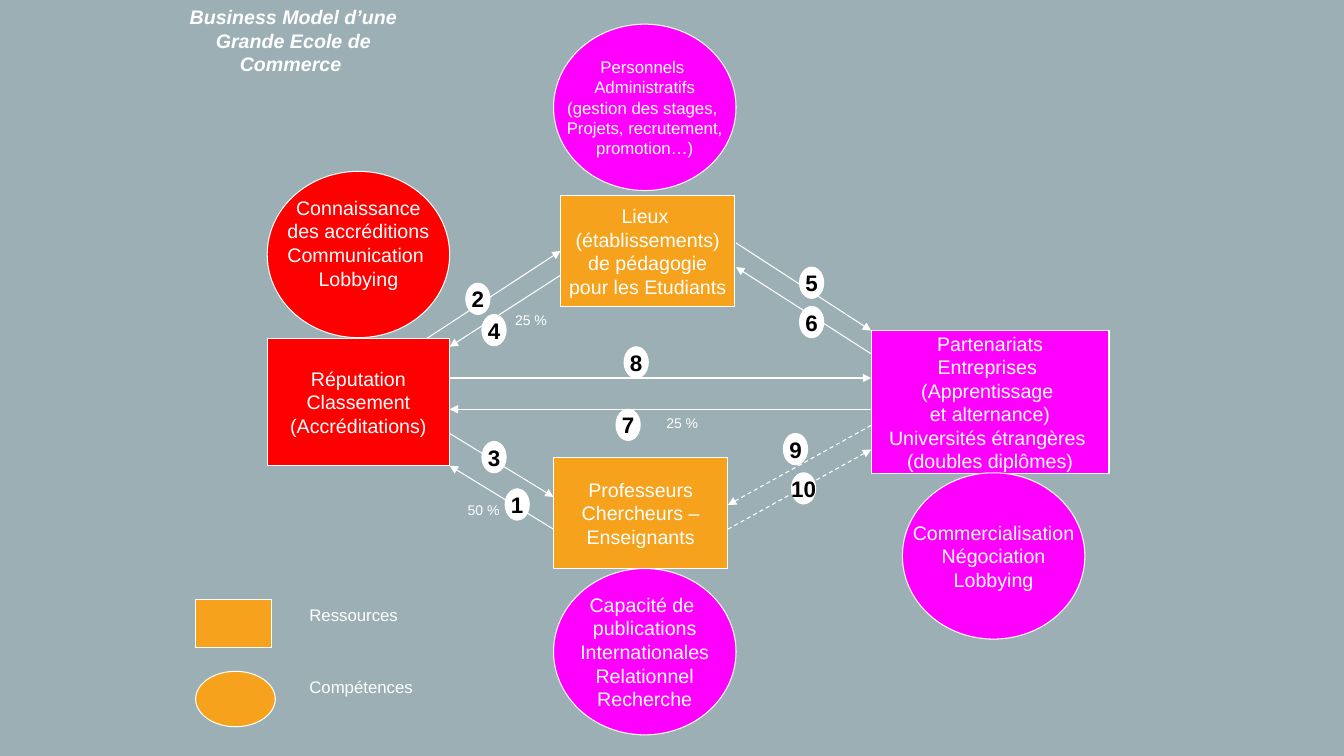
from lxml import etree
from pptx import Presentation
from pptx.dml.color import RGBColor
from pptx.enum.dml import MSO_LINE
from pptx.enum.shapes import MSO_CONNECTOR, MSO_SHAPE
from pptx.enum.text import MSO_ANCHOR, MSO_AUTO_SIZE, PP_ALIGN
from pptx.oxml.ns import qn
from pptx.util import Inches, Pt

WHITE = RGBColor(0xFF, 0xFF, 0xFF)
BLACK = RGBColor(0x00, 0x00, 0x00)
RED = RGBColor(0xFF, 0x00, 0x00)
ORANGE = RGBColor(0xF6, 0xA2, 0x1D)
MAGENTA = RGBColor(0xFF, 0x00, 0xFF)
GREY = RGBColor(0x9B, 0xAF, 0xB5)
RECTANGLE, ELLIPSE = MSO_SHAPE.RECTANGLE, MSO_SHAPE.OVAL
STRAIGHT, DASH = MSO_CONNECTOR.STRAIGHT, MSO_LINE.DASH
LEFT, CENTER = PP_ALIGN.LEFT, PP_ALIGN.CENTER
TOP, MIDDLE = MSO_ANCHOR.TOP, MSO_ANCHOR.MIDDLE
NO_AUTOFIT = MSO_AUTO_SIZE.NONE


def write(frame, text, size=14, color=WHITE, bold=False, italic=False,
          align=CENTER, anchor=MIDDLE, wrap=False):
    frame.auto_size = NO_AUTOFIT
    frame.word_wrap = wrap
    frame.vertical_anchor = anchor
    for index, line in enumerate(text.split("\n")):
        para = frame.add_paragraph() if index else frame.paragraphs[0]
        para.alignment = align
        span = para.add_run()
        span.text = line
        span.font.name = "Arial"
        span.font.size = Pt(size)
        span.font.bold = bold
        span.font.italic = italic
        span.font.color.rgb = color


def add_box(kind, place, fill):
    box = slide.shapes.add_shape(kind, *map(Inches, place))
    box.shadow.inherit = False
    box.fill.solid()
    box.fill.fore_color.rgb = fill
    box.line.color.rgb = WHITE
    box.line.width = Pt(0.75)
    return box


deck = Presentation()
deck.slide_width, deck.slide_height = Inches(13.33), Inches(7.5)
slide = deck.slides.add_slide(deck.slide_layouts[5])
slide.background.fill.solid()
slide.background.fill.fore_color.rgb = GREY

title = slide.shapes.title
title.left, title.top = Inches(1.67), Inches(0)
title.width, title.height = Inches(2.48), Inches(1.16)
write(title.text_frame, "Business Model d’une Grande Ecole de Commerce ",
      bold=True, italic=True, anchor=TOP, wrap=True)

resources = [
    ((2.65, 3.36, 1.81, 1.26), RED, "Réputation\nClassement\n(Accréditations)"),
    ((5.49, 4.54, 1.73, 1.1), ORANGE, "Professeurs\nChercheurs –\nEnseignants"),
    ((8.64, 3.28, 2.36, 1.42), MAGENTA,
     "Partenariats\nEntreprises \n(Apprentissage \net alternance)\n"
     "Universités étrangères \n(doubles diplômes)"),
    ((5.56, 1.94, 1.73, 1.1), ORANGE,
     "Lieux \n(établissements)\nde pédagogie\npour les Etudiants"),
]
for place, fill, text in resources:
    write(add_box(RECTANGLE, place, fill).text_frame, text)

skills = [
    (2.65, 1.7, RED, 14, 0.28,
     "Connaissance\ndes accréditions\nCommunication \nLobbying"),
    (5.49, 5.64, MAGENTA, 14, 0.05,
     "Capacité de \npublications\nInternationales\nRelationnel\nRecherche"),
    (5.49, 0.24, MAGENTA, 12, 0.05,
     "Personnels \nAdministratifs\n(gestion des stages, \n"
     "Projets, recrutement,\npromotion…)"),
    (8.95, 4.69, MAGENTA, 14, 0.05, "Commercialisation\nNégociation\nLobbying"),
]
for left, top, fill, size, bottom_margin, text in skills:
    skill = add_box(ELLIPSE, (left, top, 1.81, 1.65), fill)
    skill.text_frame.margin_bottom = Inches(bottom_margin)
    write(skill.text_frame, text, size=size)

arrows = [
    (5.49, 5.25, 4.46, 4.62, None),
    (4.46, 4.3, 5.49, 4.93, None),
    (8.64, 4.06, 4.46, 4.06, None),
    (4.46, 3.75, 8.64, 3.75, None),
    (5.56, 2.73, 4.46, 3.44, None),
    (4.23, 3.36, 5.56, 2.49, None),
    (7.3, 2.41, 8.64, 3.28, None),
    (8.64, 3.51, 7.3, 2.65, None),
    (7.22, 5.25, 8.64, 4.46, DASH),
    (8.64, 4.22, 7.22, 5.01, DASH),
]
for *ends, dash in arrows:
    arrow = slide.shapes.add_connector(STRAIGHT, *map(Inches, ends))
    arrow.line.color.rgb = WHITE
    arrow.line.width = Pt(0.75)
    if dash:
        arrow.line.dash_style = dash
    etree.SubElement(arrow.line._get_or_add_ln(), qn("a:tailEnd"), type="triangle")
    etree.SubElement(arrow._element.spPr, qn("a:effectLst"))

add_box(RECTANGLE, (1.94, 5.95, 0.75, 0.47), ORANGE)
add_box(ELLIPSE, (1.94, 6.66, 0.79, 0.55), ORANGE)

labels = [
    ((4.54, 4.93, 0.71, 0.27), 10, "50 %"),
    ((6.51, 4.06, 0.71, 0.27), 10, "25 %"),
    ((5.01, 3.04, 0.71, 0.27), 10, "25 %"),
    ((2.97, 5.95, 1.57, 0.3), 12, "Ressources"),
    ((2.97, 6.66, 1.57, 0.3), 12, "Compétences"),
]
for place, size, text in labels:
    label = slide.shapes.add_textbox(*map(Inches, place))
    write(label.text_frame, text, size=size, align=LEFT, anchor=TOP, wrap=True)

badge_corners = [
    (5.01, 4.85), (4.62, 2.81), (4.78, 4.38), (4.78, 3.12), (7.93, 2.65),
    (7.93, 3.04), (6.11, 4.06), (6.19, 3.44), (7.77, 4.3), (7.85, 4.69),
]
for number, (left, top) in enumerate(badge_corners, 1):
    badge = add_box(ELLIPSE, (left, top, 0.24, 0.31), WHITE)
    write(badge.text_frame, str(number), size=16, color=BLACK, bold=True)

deck.save("out.pptx")
